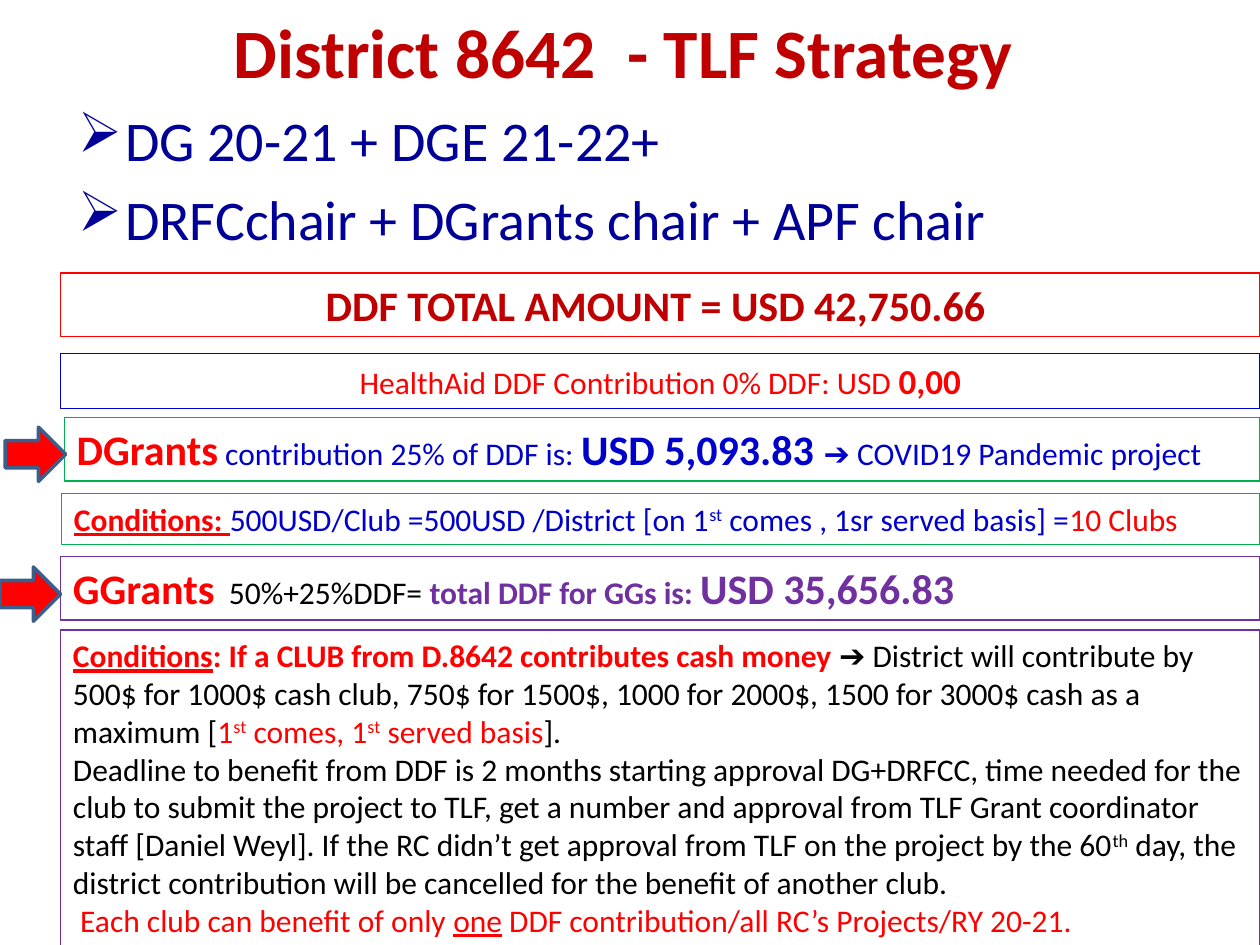
"""Build the District 8642 TLF strategy slide."""
from dataclasses import dataclass
from typing import Optional

from lxml import etree
from pptx import Presentation
from pptx import util as u
from pptx.dml.color import RGBColor
from pptx.enum import shapes, text
from pptx.oxml import ns


@dataclass(frozen=True)
class Theme:
    font: str = "Calibri"
    crimson: str = "C00000"
    navy: str = "000099"
    red: str = "FF0000"
    blue: str = "0000CC"
    green: str = "00B050"
    purple: str = "7030A0"
    black: str = "000000"
    steel: str = "3A5F8C"
    title: float = 39.6
    lead: float = 32
    large: float = 24
    medium: float = 20
    normal: float = 18
    outline: float = 0.75
    arrow_outline: float = 2


THEME = Theme()


@dataclass(frozen=True)
class Span:
    words: str
    color: str = THEME.black
    size: float = THEME.normal
    bold: bool = False
    underline: bool = False
    raised: bool = False


@dataclass(frozen=True)
class Panel:
    left: float
    top: float
    width: float
    height: float
    paras: list[list[Span]]
    outline: Optional[str] = None
    centered: bool = False
    bullet: Optional[str] = None
    anchor: text.MSO_ANCHOR = text.MSO_ANCHOR.TOP


@dataclass(frozen=True)
class Arrow:
    left: float
    top: float


def paint_line(shape, color: str, width: float) -> None:
    shape.line.color.rgb = RGBColor.from_string(color)
    shape.line.width = u.Pt(width)


def add_span(para, item: Span) -> None:
    span = para.add_run()
    span.text = item.words
    style = {"name": THEME.font, "size": u.Pt(item.size),
             "bold": item.bold, "underline": item.underline}
    for name, value in style.items():
        setattr(span.font, name, value)
    span.font.color.rgb = RGBColor.from_string(item.color)
    if item.raised:
        span._r.get_or_add_rPr().set("baseline", "30000")


def add_bullet(para, mark: str, indent: float) -> None:
    properties = para._p.get_or_add_pPr()
    properties.set("marL", str(u.Pt(indent)))
    properties.set("indent", str(-u.Pt(indent)))
    etree.SubElement(properties, ns.qn("a:buChar")).set("char", mark)


def draw_panel(page, panel: Panel) -> None:
    box = page.shapes.add_textbox(u.Pt(panel.left), u.Pt(panel.top),
                                  u.Pt(panel.width), u.Pt(panel.height))
    frame = box.text_frame
    fit = text.MSO_AUTO_SIZE.SHAPE_TO_FIT_TEXT if panel.outline else text.MSO_AUTO_SIZE.NONE
    for name, value in {"word_wrap": True, "auto_size": fit,
                        "vertical_anchor": panel.anchor}.items():
        setattr(frame, name, value)
    if panel.outline:
        paint_line(box, panel.outline, THEME.outline)
    for index, spans in enumerate(panel.paras):
        para = frame.add_paragraph() if index else frame.paragraphs[0]
        para.alignment = text.PP_ALIGN.CENTER if panel.centered else text.PP_ALIGN.LEFT
        if panel.bullet:
            para.space_before = u.Pt(0.2 * THEME.lead if index else 0)
            add_bullet(para, panel.bullet, 27)
        for item in spans:
            add_span(para, item)


def draw_arrow(page, arrow: Arrow) -> None:
    shape = page.shapes.add_shape(shapes.MSO_SHAPE.RIGHT_ARROW, u.Pt(arrow.left),
                                  u.Pt(arrow.top), u.Pt(34.6), u.Pt(31))
    shape.shadow.inherit = False
    shape.fill.solid()
    shape.fill.fore_color.rgb = RGBColor.from_string(THEME.red)
    paint_line(shape, THEME.steel, THEME.arrow_outline)


def red(words: str, **style) -> Span:
    return Span(words, THEME.red, **style)


def blue(words: str, **style) -> Span:
    return Span(words, THEME.blue, **style)


def purple(words: str, **style) -> Span:
    return Span(words, THEME.purple, bold=True, **style)


LEFT, WIDTH = 34.6, 685.4
BIG = {"size": THEME.large, "bold": True}

PANELS = [
    Panel(36.7, 3.6, 648, 51.1,
          [[Span("District 8642  - TLF Strategy ", THEME.crimson, THEME.title, True)]],
          centered=True, anchor=text.MSO_ANCHOR.MIDDLE),
    Panel(37.4, 56.9, 648, 102.2,
          [[Span(words, THEME.navy, THEME.lead)] for words in
           ("DG 20-21 + DGE 21-22+", "DRFCchair + DGrants chair + APF chair")],
          bullet="➢"),
    Panel(LEFT, 156, WIDTH, 36.4,
          [[Span("DDF TOTAL AMOUNT = USD 42,750.66 ", THEME.crimson, **BIG)]],
          THEME.red, centered=True),
    Panel(LEFT, 202, WIDTH, 31.5,
          [[red("HealthAid DDF Contribution 0% DDF: USD "),
            red("0,00", size=THEME.medium, bold=True)]],
          THEME.blue, centered=True),
    Panel(36.7, 238.5, 683.3, 36.4,
          [[red("DGrants", **BIG), Span(" "), blue("contribution 25% of DDF is: "),
            blue("USD 5,093.83 ", **BIG), blue("➔ COVID19 Pandemic project")]],
          THEME.green),
    Panel(LEFT, 318, WIDTH, 36.4,
          [[red("GGrants", **BIG), Span("  50%+25%DDF= "),
            purple("total DDF for GGs is: "),
            purple("USD 35,656.83", size=THEME.large)]],
          THEME.purple),
    Panel(35.2, 282, 684.8, 29.1,
          [[red("Conditions: ", bold=True, underline=True),
            blue("500USD/Club =500USD /District [on 1"), blue("st", raised=True),
            blue(" comes , 1sr served basis] ="), red("10 Clubs")]],
          THEME.green),
    Panel(LEFT, 360, WIDTH, 181.4,
          [[red("Conditions", bold=True, underline=True),
            red(": If a CLUB from D.8642 contributes cash money ", bold=True),
            Span("➔ District will contribute by 500$ for 1000$ cash club, 750$ for 1500$, "
                 "1000 for 2000$, 1500 for 3000$ cash as a maximum ["),
            red("1"), red("st", raised=True), red(" comes, 1"), red("st", raised=True),
            red(" served basis"), Span("].")],
           [Span("Deadline to benefit from DDF is 2 months starting approval DG+DRFCC, time "
                 "needed for the club to submit the project to TLF, get a number and approval "
                 "from TLF Grant coordinator staff [Daniel Weyl]. If the RC didn’t get approval "
                 "from TLF on the project by the 60"),
            Span("th", raised=True),
            Span(" day, the district contribution will be cancelled for the benefit of "
                 "another club.")],
           [red(" Each club can benefit of only "), red("one", underline=True),
            red(" DDF contribution/all RC’s Projects/RY 20-21.")]],
          THEME.purple),
]

ARROWS = [Arrow(2.9, 244.1), Arrow(0, 324)]


def main() -> None:
    deck = Presentation()
    deck.slide_width, deck.slide_height = u.Pt(720), u.Pt(540)
    page = deck.slides.add_slide(deck.slide_layouts[6])
    for panel in PANELS:
        draw_panel(page, panel)
    for arrow in ARROWS:
        draw_arrow(page, arrow)
    deck.save("out.pptx")


if __name__ == "__main__":
    main()
